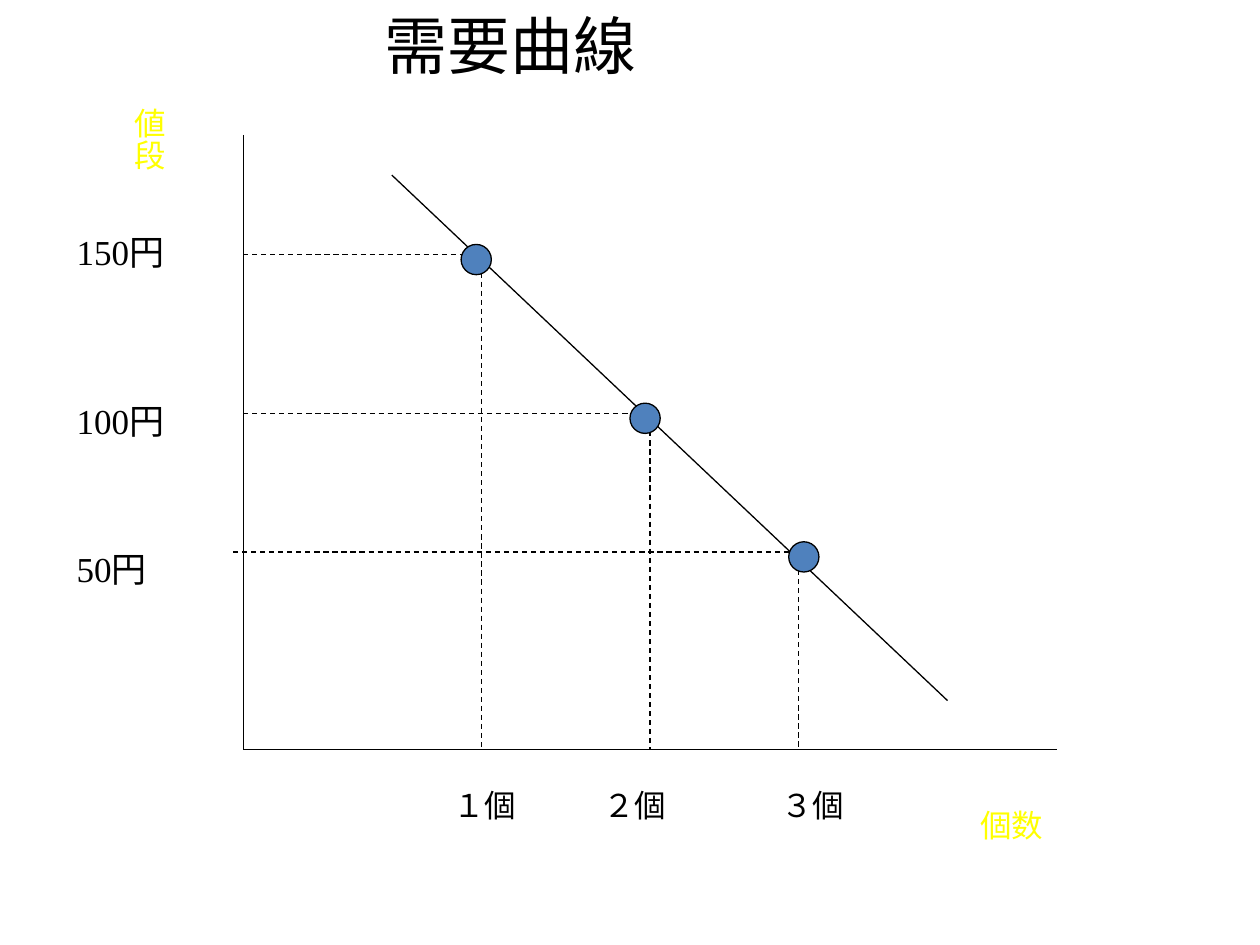
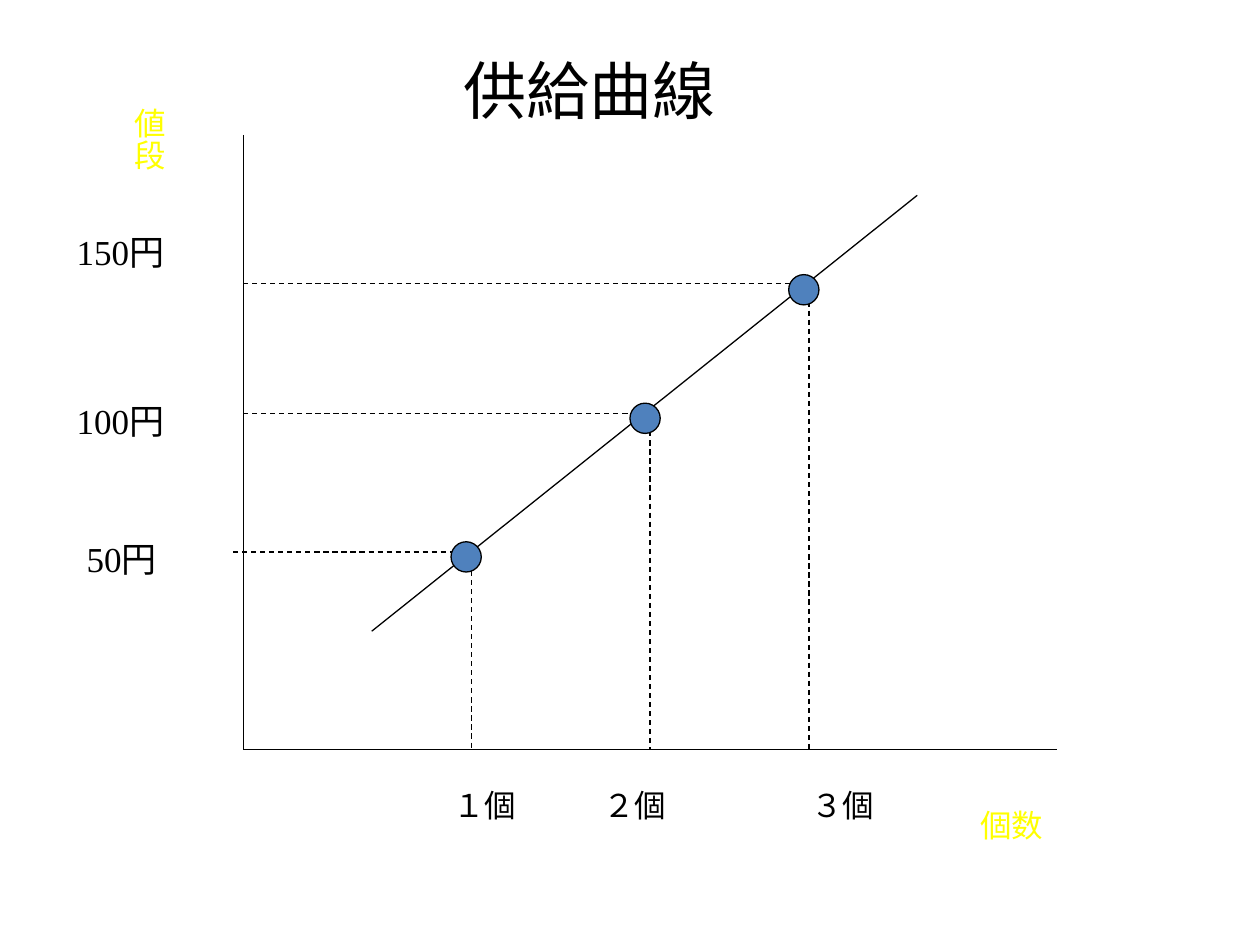
from dataclasses import dataclass
from typing import NamedTuple

from lxml.etree import SubElement
from pptx import Presentation
from pptx.dml.color import RGBColor as RGB
from pptx.enum.dml import MSO_LINE_DASH_STYLE as Dash
from pptx.enum.shapes import MSO_CONNECTOR as Connector, MSO_SHAPE as Shape
from pptx.enum.text import MSO_AUTO_SIZE as AutoSize
from pptx.oxml.ns import qn
from pptx.util import Inches, Pt

PX = Inches(1) // 100


@dataclass(frozen=True)
class Theme:
    font: str = "Times New Roman"
    ink: RGB = RGB(0x00, 0x00, 0x00)
    axis_name: RGB = RGB(0xFF, 0xFF, 0x00)
    dot: RGB = RGB(0x4F, 0x81, 0xBD)
    title_size: int = 36
    price_size: int = 20
    quantity_size: int = 18
    line_width: float = 0.75


class Point(NamedTuple):
    price_y: int
    guide_left: int
    guide_right: int
    drop_x: int
    drop_top: int
    dot_left: int
    dot_top: int


class Label(NamedTuple):
    text: str
    left: int
    top: int
    width: int


class Curve(NamedTuple):
    title: Label
    start: tuple
    end: tuple
    points: list
    quantities: list
    prices: list


AXIS_LEFT, AXIS_TOP, AXIS_RIGHT, AXIS_BOTTOM = 193, 107, 839, 595
DOT_SIZE = 24
QUANTITY_TOP = 619
TITLE_HEIGHT, PRICE_HEIGHT, QUANTITY_HEIGHT = 70, 43, 40

MIDDLE_POINT = Point(328, AXIS_LEFT, 516, 516, 328, 500, 320)
ONE_UNIT = Label("１個", 350, QUANTITY_TOP, 102)
TWO_UNITS = Label("２個", 469, QUANTITY_TOP, 118)
PRICE_150 = Label("150円", 51, 178, 118)
PRICE_100 = Label("100円", 51, 312, 118)

CURVES = [
    Curve(
        title=Label("需要曲線", 295, 0, 535),
        start=(311, 139),
        end=(752, 556),
        points=[
            Point(202, AXIS_LEFT, 374, 382, 202, 366, 194),
            MIDDLE_POINT,
            Point(438, 185, 626, 634, 438, 626, 430),
        ],
        quantities=[ONE_UNIT, TWO_UNITS, Label("３個", 610, QUANTITY_TOP, 102)],
        prices=[PRICE_150, PRICE_100, Label("50円", 51, 430, 134)],
    ),
    Curve(
        title=Label("供給曲線", 358, 36, 260),
        start=(295, 501),
        end=(728, 155),
        points=[
            Point(438, 185, 374, 374, 446, 358, 430),
            MIDDLE_POINT,
            Point(225, AXIS_LEFT, 642, 642, 225, 626, 218),
        ],
        quantities=[ONE_UNIT, TWO_UNITS, Label("３個", 634, QUANTITY_TOP, 102)],
        prices=[PRICE_150, PRICE_100, Label("50円", 59, 422, 134)],
    ),
]


class Deck:
    def __init__(self, theme):
        self.theme = theme
        self.presentation = Presentation()
        self.presentation.slide_width = 1000 * PX
        self.presentation.slide_height = 750 * PX
        self.slide = None

    def new_slide(self):
        blank = self.presentation.slide_layouts[6]
        self.slide = self.presentation.slides.add_slide(blank)

    def line(self, start, end, dashed=False):
        ends = [length * PX for length in (*start, *end)]
        stroke = self.slide.shapes.add_connector(Connector.STRAIGHT, *ends)
        self.outline(stroke.line)
        if dashed:
            stroke.line.dash_style = Dash.DASH
        SubElement(stroke._element.spPr, qn("a:effectLst"))

    def outline(self, line):
        line.color.rgb = self.theme.ink
        line.width = Pt(self.theme.line_width)

    def text(self, label, height, size, color=None, vertical=False):
        box = self.slide.shapes.add_textbox(
            label.left * PX, label.top * PX, label.width * PX, height * PX
        )
        frame = box.text_frame
        frame.word_wrap = True
        frame.auto_size = AutoSize.SHAPE_TO_FIT_TEXT
        if vertical:
            frame._txBody.bodyPr.set("vert", "eaVert")
        paragraph = frame.paragraphs[0]
        paragraph.text = label.text
        paragraph.font.name = self.theme.font
        paragraph.font.size = Pt(size)
        paragraph.font.color.rgb = color or self.theme.ink

    def dot(self, left, top):
        marker = self.slide.shapes.add_shape(
            Shape.OVAL, left * PX, top * PX, DOT_SIZE * PX, DOT_SIZE * PX
        )
        marker.shadow.inherit = False
        marker.fill.solid()
        marker.fill.fore_color.rgb = self.theme.dot
        self.outline(marker.line)

    def axes(self):
        theme = self.theme
        origin = (AXIS_LEFT, AXIS_BOTTOM)
        self.line((AXIS_LEFT, AXIS_TOP), origin)
        self.line(origin, (AXIS_RIGHT, AXIS_BOTTOM))
        self.text(Label("個数", 768, 635, 173), QUANTITY_HEIGHT,
                  theme.quantity_size, theme.axis_name)
        self.text(Label("値段", 88, 76, 50), 173,
                  theme.quantity_size, theme.axis_name, vertical=True)

    def guides(self, point):
        self.line((point.guide_left, point.price_y),
                  (point.guide_right, point.price_y), dashed=True)
        self.line((point.drop_x, point.drop_top),
                  (point.drop_x, AXIS_BOTTOM), dashed=True)

    def curve(self, curve):
        self.new_slide()
        self.axes()
        self.line(curve.start, curve.end)
        for point in curve.points:
            self.guides(point)
        for quantity in curve.quantities:
            self.text(quantity, QUANTITY_HEIGHT, self.theme.quantity_size)
        for price in curve.prices:
            self.text(price, PRICE_HEIGHT, self.theme.price_size)
        self.text(curve.title, TITLE_HEIGHT, self.theme.title_size)
        for point in curve.points:
            self.dot(point.dot_left, point.dot_top)


def main():
    deck = Deck(Theme())
    for curve in CURVES:
        deck.curve(curve)
    deck.presentation.save("out.pptx")


if __name__ == "__main__":
    main()
